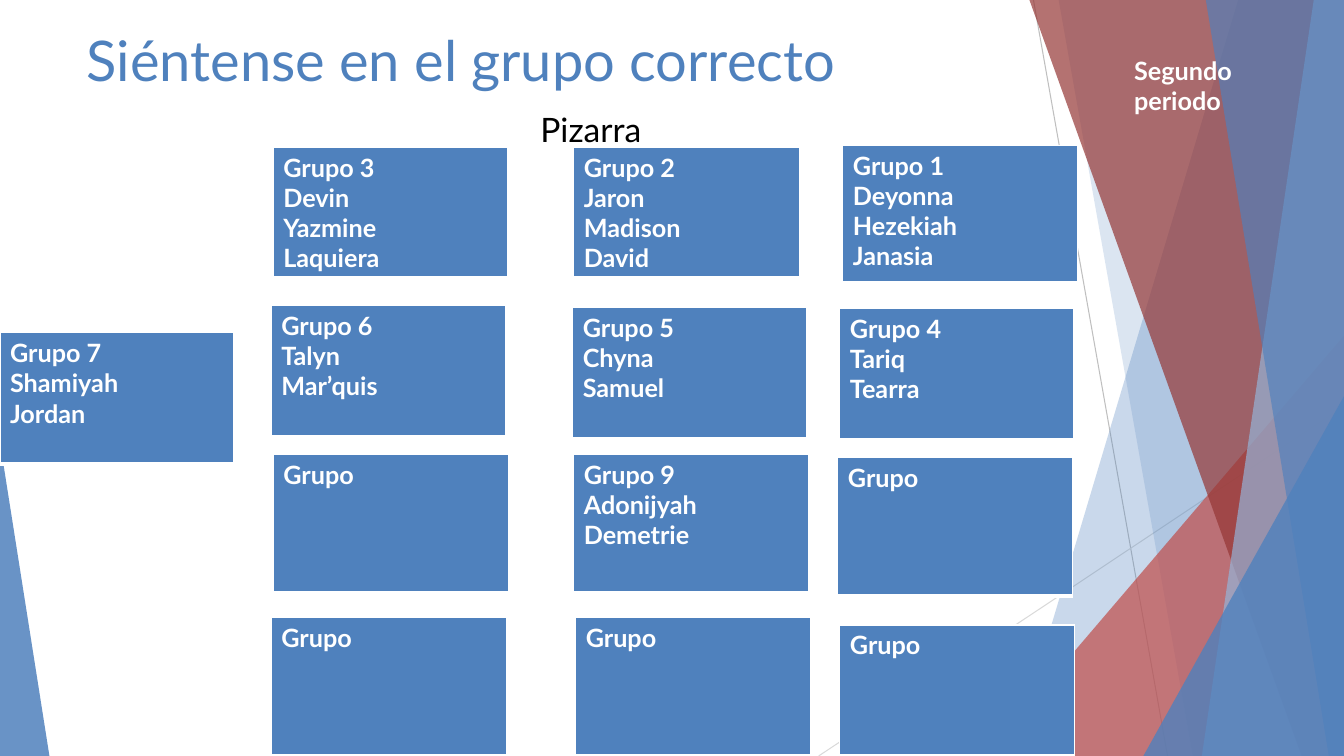
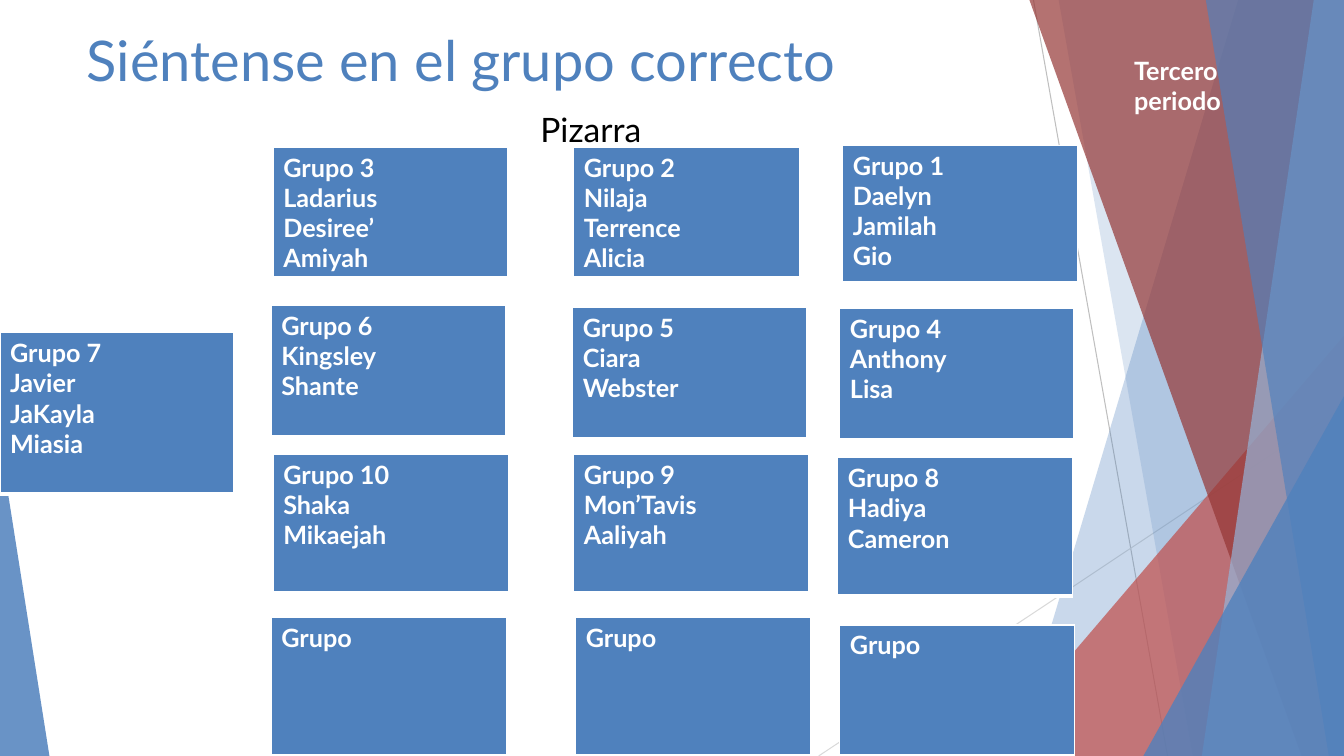
from lxml.etree import SubElement
from pptx import Presentation
from pptx.dml.color import RGBColor
from pptx.enum.shapes import MSO_CONNECTOR as Conn, MSO_SHAPE as Shape
from pptx.enum.text import MSO_ANCHOR as Anchor, MSO_AUTO_SIZE as Auto, PP_ALIGN as Align
from pptx.oxml.ns import qn
from pptx.util import Inches, Pt

WIDE, HIGH = 13.33, 7.5
BLUE, RED, WHITE = "4F81BD", "C0504D", "FFFFFF"

SPOTS = [
    (8.36, 1.44, 2.33, 1.37), (5.69, 1.46, 2.24, 1.3), (2.71, 1.46, 2.32, 1.3),
    (8.33, 3.06, 2.32, 1.3), (5.68, 3.05, 2.32, 1.3), (2.69, 3.03, 2.32, 1.3),
    (0, 3.3, 2.32, 1.3),
    (8.31, 4.54, 2.33, 1.37), (5.69, 4.51, 2.33, 1.37), (2.71, 4.51, 2.33, 1.37),
    (8.33, 6.2, 2.33, 1.3), (5.71, 6.13, 2.33, 1.37), (2.69, 6.13, 2.33, 1.37),
]
SIDE = 6

CLASSES = [
    ("Segundo periodo", 1.3, [
        "Grupo 1 Deyonna Hezekiah Janasia", "Grupo 2 Jaron Madison David",
        "Grupo 3 Devin Yazmine Laquiera", "Grupo 4 Tariq Tearra",
        "Grupo 5 Chyna Samuel", "Grupo 6 Talyn Mar’quis",
        "Grupo 7 Shamiyah Jordan", "Grupo", "Grupo 9 Adonijyah Demetrie",
        "Grupo", "Grupo", "Grupo", "Grupo"]),
    ("Tercero periodo", 1.6, [
        "Grupo 1 Daelyn Jamilah Gio", "Grupo 2 Nilaja Terrence Alicia",
        "Grupo 3 Ladarius Desiree’ Amiyah", "Grupo 4 Anthony Lisa",
        "Grupo 5 Ciara Webster", "Grupo 6 Kingsley Shante",
        "Grupo 7 Javier JaKayla Miasia", "Grupo 8 Hadiya Cameron",
        "Grupo 9 Mon’Tavis Aaliyah", "Grupo 10 Shaka Mikaejah",
        "Grupo", "Grupo", "Grupo"]),
]


def color(code):
    """Turn a hex string into a colour."""
    return RGBColor.from_string(code)


class Deck:
    """Hold the style and the current slide."""

    font = "Lato"

    def __init__(self):
        """Start an empty wide deck."""
        self.prs = Presentation()
        self.prs.slide_width, self.prs.slide_height = Inches(WIDE), Inches(HIGH)

    def page(self):
        """Add a slide with the shared backdrop."""
        self.slide = self.prs.slides.add_slide(self.prs.slide_layouts[5])
        self.shapes = self.slide.shapes
        self.line(10.25, 0, 11.58, HIGH, "BFBFBF")
        self.line(WIDE, 4.03, 8.12, HIGH, "D9D9D9")
        self.band(12.28, 10.04, BLUE, 30)
        self.band(10.5, 11.83, BLUE, 20)
        self.wedge(9.77, 3.33, 3.56, 1, RED, 72)
        self.band(10.21, 12.91, "953735", 70)
        self.band(13.03, 11.92, "95B3D7", 70)
        self.band(11.96, 13.18, BLUE, 65)
        self.wedge(11.34, 3.93, 1.99, 1, BLUE, 80)
        self.wedge(0, 4.39, 0.49, 0, BLUE, 85)

    def line(self, x1, y1, x2, y2, code):
        """Draw a thin line."""
        line = self.shapes.add_connector(
            Conn.STRAIGHT, Inches(x1), Inches(y1), Inches(x2), Inches(y2))
        line.line.color.rgb = color(code)
        line.line.width = Pt(0.75)
        SubElement(line._element.spPr, qn("a:effectLst"))

    def paint(self, shape, code, alpha):
        """Fill a shape with a see-through colour, in percent."""
        shape.shadow.inherit = False
        shape.line.fill.background()
        shape.fill.solid()
        shape.fill.fore_color.rgb = color(code)
        tint = shape._element.spPr.find(qn("a:solidFill"))[0]
        SubElement(tint, qn("a:alpha")).set("val", str(alpha * 1000))

    def band(self, top, foot, code, alpha):
        """Draw a full-height band that reaches the right edge."""
        path = self.shapes.build_freeform(Inches(top), 0)
        path.add_line_segments([(Inches(x), Inches(y)) for x, y in
                                ((WIDE, 0), (WIDE, HIGH), (foot, HIGH))])
        self.paint(path.convert_to_shape(), code, alpha)

    def wedge(self, x, y, w, tip, code, alpha):
        """Draw a triangle standing on the bottom edge."""
        shape = self.shapes.add_shape(
            Shape.ISOSCELES_TRIANGLE, Inches(x), Inches(y), Inches(w), Inches(HIGH - y))
        shape.adjustments[0] = tip
        self.paint(shape, code, alpha)

    def style(self, para, size, code, bold=False):
        """Set the font of a paragraph."""
        para.alignment = Align.LEFT
        font = para.font
        font.name, font.size, font.bold = self.font, Pt(size), bold
        font.color.rgb = color(code)

    def title(self, text, label):
        """Fill the title and the board label below it."""
        head = self.shapes.title
        head.left, head.top = Inches(0.76), Inches(0.2)
        head.width, head.height = Inches(9.4), Inches(1.6)
        frame = head.text_frame
        frame.auto_size, frame.vertical_anchor = Auto.NONE, Anchor.TOP
        frame.text = f"{text}\n{label}"
        first, board = frame.paragraphs
        self.style(first, 40, BLUE)
        self.style(board, 24, "000000")
        board.space_before = Pt(12)
        board._p.get_or_add_pPr().set("marL", str(Inches(4.5)))

    def group(self, lines, x, y, w, h):
        """Draw one seat group as a one-cell table."""
        table = self.shapes.add_table(
            1, 1, Inches(x), Inches(y), Inches(w), Inches(h)).table
        cell = table.cell(0, 0)
        cell.text = "\n".join(lines)
        for para in cell.text_frame.paragraphs:
            self.style(para, 18, WHITE, True)
        props = cell._tc.get_or_add_tcPr()
        for side, size in (("L", 1), ("R", 1), ("T", 1), ("B", 3)):
            edge = SubElement(props, qn(f"a:ln{side}"), w=str(Pt(size)))
            fill = SubElement(edge, qn("a:solidFill"))
            SubElement(fill, qn("a:srgbClr"), val=WHITE)
        cell.fill.solid()
        cell.fill.fore_color.rgb = color(BLUE)

    def note(self, text):
        """Write the class period in the top right corner."""
        box = self.shapes.add_textbox(Inches(11.15), Inches(0.5), Inches(1.8), Inches(0.71))
        box.text_frame.word_wrap = True
        box.text_frame.text = text
        self.style(box.text_frame.paragraphs[0], 18, WHITE, True)


def main():
    """Build one seating plan for each class."""
    deck = Deck()
    for period, tall, groups in CLASSES:
        deck.page()
        deck.title("Siéntense en el grupo correcto", "Pizarra")
        for spot, (text, (x, y, w, h)) in enumerate(zip(groups, SPOTS)):
            word, *rest = text.split()
            lines = [" ".join([word, *rest[:1]]), *rest[1:]]
            deck.group(lines, x, y, w, tall if spot == SIDE else h)
        deck.note(period)
    deck.prs.save("out.pptx")


if __name__ == "__main__":
    main()
